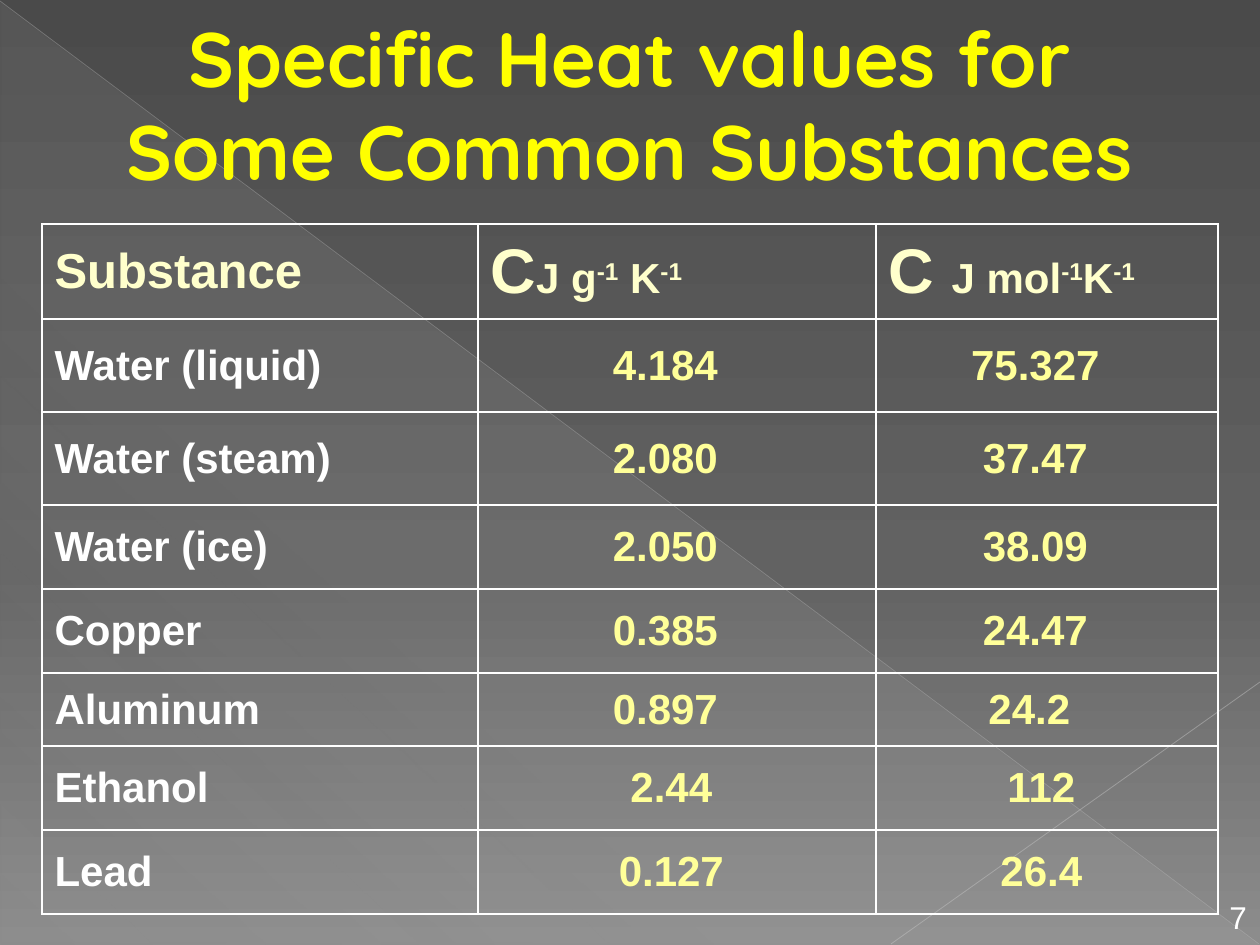
from lxml.etree import SubElement
from pptx import Presentation
from pptx.dml.color import RGBColor
from pptx.enum.shapes import MSO_CONNECTOR as Connector, MSO_SHAPE as Shape
from pptx.enum.text import MSO_ANCHOR as Anchor, PP_ALIGN as Align
from pptx.oxml.ns import qn
from pptx.util import Emu, Pt

HEADINGS = [
    [("Substance", 28, 0)],
    [("C", 36, 0), ("J g", 24, 0), ("-1", 24, 30), (" K", 24, 0), ("-1", 24, 30)],
    [("C ", 36, 0), ("J mol", 24, 0), ("-1", 24, 30), ("K", 24, 0), ("-1", 24, 30)],
]
SUBSTANCES = [
    ("Water (liquid)", "4.184", "75.327", 36, 36),
    ("Water (steam)", "2.080", "37.47", 36, 36),
    ("Water (ice)", "2.050", "38.09", 36, 36),
    ("Copper", "0.385", "24.47", 36, 36),
    ("Aluminum", "0.897", "24.2", 36, 48),
    ("Ethanol", "2.44", "112", 24, 24),
    ("Lead", "0.127", "26.4", 24, 24),
]
COLUMN_WIDTHS = [436, 398, 342]
ROW_HEIGHTS = [95, 93, 93, 84, 84, 73, 84, 84]


def px(length):
    return Emu(round(length * 914400 / 126))


def color(value):
    return RGBColor.from_string(value)


class SlideBuilder:
    """Draws styled elements on the current slide."""

    white, cream, pale, yellow = "FFFFFF", "FFFFCC", "FFFF99", "FFFF00"
    body_font, title_font = "Arial", "Quicksand"

    def __init__(self, slide):
        self.slide = slide

    def style(self, run, size, value, font=body_font, bold=True):
        run.font.size = Pt(size)
        run.font.name = font
        run.font.bold = bold
        run.font.color.rgb = color(value)

    def gradient(self, fill, element, stops, angle):
        fill.gradient()
        fill.gradient_angle = 360 - angle
        stop_list = next(element.iter(qn("a:gsLst")))
        for old_stop in list(stop_list):
            stop_list.remove(old_stop)
        for position, value, opacity in stops:
            stop = SubElement(stop_list, qn("a:gs"), pos=str(position * 1000))
            tint = SubElement(stop, qn("a:srgbClr"), val=value)
            SubElement(tint, qn("a:alpha"), val=str(opacity * 1000))

    def background(self, stops, angle):
        self.gradient(self.slide.background.fill, self.slide.element, stops, angle)

    def triangle(self, left, top, width, height, stops, angle):
        shape = self.slide.shapes.add_shape(
            Shape.RIGHT_TRIANGLE, px(left), px(top), px(width), px(height))
        shape.shadow.inherit = False
        shape.line.fill.background()
        self.gradient(shape.fill, shape.element, stops, angle)

    def line(self, start, end, value, width, opacity):
        ends = [px(length) for length in (*start, *end)]
        connector = self.slide.shapes.add_connector(Connector.STRAIGHT, *ends)
        connector.line.color.rgb = color(value)
        connector.line.width = Pt(width)
        tint = next(connector.element.iter(qn("a:srgbClr")))
        SubElement(tint, qn("a:alpha"), val=str(opacity * 1000))
        SubElement(connector.element.spPr, qn("a:effectLst"))

    def text(self, text, left, top, width, height, wrap=True, align=Align.LEFT,
             anchor=Anchor.TOP, **style):
        box = self.slide.shapes.add_textbox(px(left), px(top), px(width), px(height))
        frame = box.text_frame
        frame.text = text
        frame.word_wrap = wrap
        frame.vertical_anchor = anchor
        paragraph = frame.paragraphs[0]
        paragraph.alignment = align
        self.style(paragraph.runs[0], **style)

    def cell(self, cell, parts, value, align=Align.LEFT, right_margin=13):
        properties = cell._tc.get_or_add_tcPr()
        for side in ("lnL", "lnR", "lnT", "lnB"):
            border = SubElement(properties, qn(f"a:{side}"), w=str(Pt(1)))
            fill = SubElement(border, qn("a:solidFill"))
            SubElement(fill, qn("a:srgbClr"), val=self.white)
        cell.fill.background()
        cell.vertical_anchor = Anchor.MIDDLE
        cell.margin_right = px(right_margin)
        paragraph = cell.text_frame.paragraphs[0]
        paragraph.alignment = align
        for text, size, baseline in parts:
            run = paragraph.add_run()
            run.text = text
            self.style(run, size, value)
            if baseline:
                run.font._element.set("baseline", str(baseline * 1000))

    def table(self, left, top, widths, heights, headings, rows):
        frame = self.slide.shapes.add_table(
            len(heights), len(widths), px(left), px(top), px(sum(widths)), px(sum(heights)))
        table = frame.table
        table.first_row = table.horz_banding = False
        for column, width in zip(table.columns, widths):
            column.width = px(width)
        for row, height in zip(table.rows, heights):
            row.height = px(height)
        for index, parts in enumerate(headings):
            self.cell(table.cell(0, index), parts, self.cream)
        for index, (name, per_gram, per_mole, gram_margin, mole_margin) in enumerate(rows, 1):
            self.cell(table.cell(index, 0), [(name, 24, 0)], self.white)
            self.cell(table.cell(index, 1), [(per_gram, 24, 0)], self.pale,
                      Align.CENTER, gram_margin)
            self.cell(table.cell(index, 2), [(per_mole, 24, 0)], self.pale,
                      Align.CENTER, mole_margin)


def main():
    presentation = Presentation()
    presentation.slide_width, presentation.slide_height = px(1260), px(945)
    builder = SlideBuilder(presentation.slides.add_slide(presentation.slide_layouts[6]))
    builder.background([(0, "4A4A4A", 100), (60, "626262", 100), (100, "8C8C8C", 100)], 90)
    builder.triangle(1, 2, 1258, 942,
                     [(0, "D2D2D2", 10), (70, "D2D2D2", 8), (100, "D2D2D2", 1)], 133)
    builder.line((0, 1), (1259, 944), "BFBFBF", 0.39, 35)
    builder.line((1260, 682), (891, 944), "C6C6C6", 0.47, 45)
    builder.table(42, 224, COLUMN_WIDTHS, ROW_HEIGHTS, HEADINGS, SUBSTANCES)
    builder.text("Specific Heat values for Some Common Substances", 63, 38, 1134, 130,
                 align=Align.CENTER, anchor=Anchor.MIDDLE, size=44,
                 value=builder.yellow, font=builder.title_font)
    builder.text("7", 1217, 892, 60, 50, wrap=False, size=18,
                 value=builder.white, bold=False)
    presentation.save("out.pptx")


if __name__ == "__main__":
    main()
